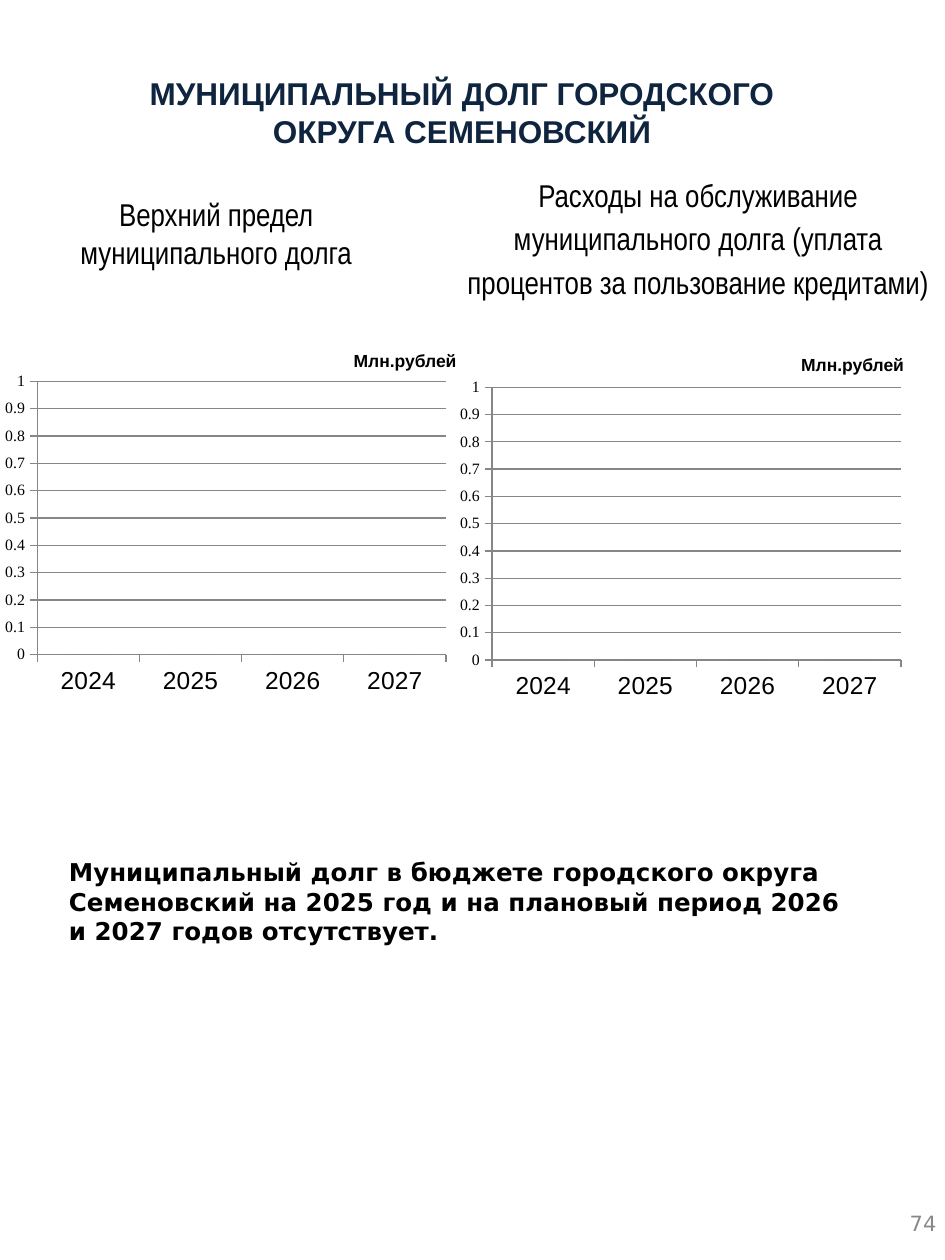
from dataclasses import dataclass

from lxml.etree import SubElement
from pptx import Presentation
from pptx.chart.data import CategoryChartData
from pptx.dml.color import RGBColor
from pptx.enum.chart import XL_CHART_TYPE, XL_TICK_LABEL_POSITION, XL_TICK_MARK
from pptx.enum.text import PP_ALIGN
from pptx.oxml.ns import qn
from pptx.util import Cm, Pt


@dataclass(frozen=True)
class Label:
    text: str
    left: float
    top: float
    width: float
    height: float
    font: str
    size: float
    color: str = "000000"
    bold: bool = False
    align: PP_ALIGN = PP_ALIGN.LEFT
    insets: tuple[float, float] = (0.25, 0.13)
    indents: tuple[float, float] = (0, 0)
    line_spacing: float = 1.0
    space_before: float = 0


@dataclass(frozen=True)
class DebtChart:
    left: float
    top: float
    plot_x: float
    plot_y: float


CHART_WIDTH, CHART_HEIGHT = 11.4, 7.26
PLOT_WIDTH, PLOT_HEIGHT = 0.723, 0.759
YEARS = ("2024", "2025", "2026", "2027")
DEBT = (0, 0, 0, 0)
CHARTS = (
    DebtChart(0, 7.44, 0.066, 0.034),
    DebtChart(9.1, 7.62, 0.072, 0.024),
)


def unit_label(left: float, top: float) -> Label:
    """Return the caption that names the unit of a chart."""
    return Label("Млн.рублей", left, top, 2.8, 0.69, "Arial", 10, bold=True,
                 align=PP_ALIGN.RIGHT, indents=(0.03, 0.13), space_before=6)


LABELS = (
    Label("МУНИЦИПАЛЬНЫЙ ДОЛГ ГОРОДСКОГО ОКРУГА СЕМЕНОВСКИЙ",
          1.47, 1.37, 17.04, 1.8, "Arial", 18, "0F243E", True,
          PP_ALIGN.CENTER, indents=(0.5, 1.85)),
    Label("Муниципальный долг в бюджете городского округа Семеновский "
          "на 2025 год и на плановый период 2026 и 2027 годов отсутствует.",
          0.64, 17.15, 18.41, 2.82, "DejaVu Sans", 14, bold=True,
          indents=(0.5, 1.65)),
    Label("74", 18.19, 24.41, 0.79, 0.64, "DejaVu Sans", 12, "888888",
          insets=(0, 0), indents=(0.15, 0), space_before=1.6),
    Label("Верхний предел муниципального долга",
          0.64, 3.68, 7.44, 2.06, "Arial Narrow", 18,
          align=PP_ALIGN.CENTER, insets=(0.25, 0.25)),
    Label("Расходы на обслуживание муниципального долга "
          "(уплата процентов за пользование кредитами)",
          9.1, 3.18, 9.95, 4.34, "Arial Narrow", 18,
          align=PP_ALIGN.CENTER, insets=(0.25, 0.25),
          line_spacing=1.15, space_before=8),
    unit_label(6.78, 6.93),
    unit_label(15.8, 7.01),
)


def rgb(color: str) -> RGBColor:
    """Turn a hex string into a colour."""
    return RGBColor.from_string(color)


def style_font(font, name: str, size: float, color: str = "000000", bold: bool = False) -> None:
    """Set face, size, colour and weight of a font."""
    font.name, font.size, font.bold = name, Pt(size), bold
    font.color.rgb = rgb(color)


def draw_label(slide, label: Label) -> None:
    """Draw one text box."""
    box = slide.shapes.add_textbox(
        Cm(label.left), Cm(label.top), Cm(label.width), Cm(label.height))
    frame = box.text_frame
    frame.word_wrap = True
    side, edge = label.insets
    frame.margin_left = frame.margin_right = Cm(side)
    frame.margin_top = frame.margin_bottom = Cm(edge)
    paragraph = frame.paragraphs[0]
    paragraph.text = label.text
    paragraph.alignment = label.align
    paragraph.line_spacing = label.line_spacing
    paragraph.space_before = Pt(label.space_before)
    style_font(paragraph.font, label.font, label.size, label.color, label.bold)
    properties = paragraph._p.get_or_add_pPr()
    for key, indent in zip(("marL", "marR"), label.indents):
        properties.set(key, str(Cm(indent)))


def place_plot(chart, x: float, y: float) -> None:
    """Fix the inner plot area as shares of the chart."""
    plot_area = chart._chartSpace.chart.plotArea
    layout = plot_area.find(qn("c:layout"))
    if layout is None:
        layout = SubElement(plot_area, qn("c:layout"))
        plot_area.insert(0, layout)
    manual = SubElement(layout, qn("c:manualLayout"))
    settings = (("layoutTarget", "inner"), ("xMode", "edge"), ("yMode", "edge"),
                ("x", x), ("y", y), ("w", PLOT_WIDTH), ("h", PLOT_HEIGHT))
    for tag, setting in settings:
        SubElement(manual, qn(f"c:{tag}")).set("val", str(setting))


def draw_chart(slide, spec: DebtChart) -> None:
    """Draw one column chart of the debt by year."""
    debt = CategoryChartData()
    debt.categories = YEARS
    debt.add_series("Series 1", DEBT)
    chart = slide.shapes.add_chart(
        XL_CHART_TYPE.COLUMN_CLUSTERED, Cm(spec.left), Cm(spec.top),
        Cm(CHART_WIDTH), Cm(CHART_HEIGHT), debt).chart
    chart.has_legend = chart.has_title = False
    style_font(chart.font, "Calibri", 18)
    columns = chart.plots[0]
    columns.gap_width = 150
    columns.vary_by_categories = False
    fill = columns.series[0].format.fill
    fill.solid()
    fill.fore_color.rgb = rgb("4F81BD")

    years, amounts = chart.category_axis, chart.value_axis
    years.tick_label_position = XL_TICK_LABEL_POSITION.LOW
    amounts.minimum_scale, amounts.maximum_scale, amounts.major_unit = 0, 1, 0.1
    amounts.has_major_gridlines = True
    amounts.tick_labels.number_format = "General"
    amounts.tick_labels.number_format_is_linked = False
    for axis, font, size in ((years, "Arial", 14), (amounts, "Times New Roman", 9)):
        axis.major_tick_mark = XL_TICK_MARK.OUTSIDE
        style_font(axis.tick_labels.font, font, size)
    for part in (years, amounts, amounts.major_gridlines):
        part.format.line.color.rgb = rgb("868686")
        part.format.line.width = Pt(0.75)
    place_plot(chart, spec.plot_x, spec.plot_y)


def main() -> None:
    """Build the slide and save it."""
    deck = Presentation()
    deck.slide_width, deck.slide_height = Cm(19.05), Cm(25.4)
    slide = deck.slides.add_slide(deck.slide_layouts[6])
    for spec in CHARTS:
        draw_chart(slide, spec)
    for label in LABELS:
        draw_label(slide, label)
    deck.save("out.pptx")


if __name__ == "__main__":
    main()
